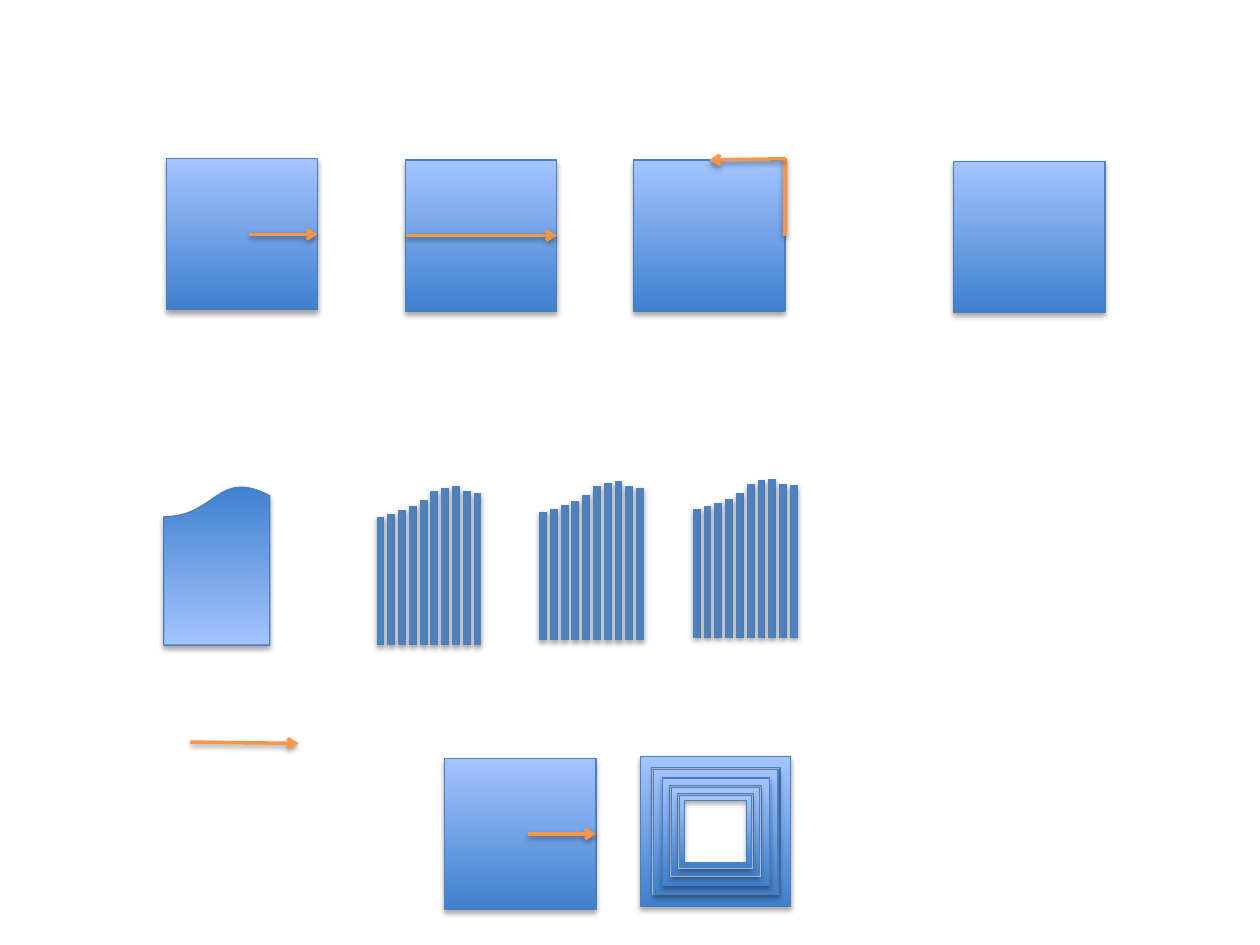
import pptx
import pptx.util
import pptx.dml.color
import pptx.enum.shapes
import pptx.oxml
from pptx.oxml.ns import qn

Inches = pptx.util.Inches
Pt = pptx.util.Pt
RGBColor = pptx.dml.color.RGBColor
Shape = pptx.enum.shapes.MSO_SHAPE
STRAIGHT = pptx.enum.shapes.MSO_CONNECTOR.STRAIGHT

DEEP_BLUE = RGBColor(0x3F, 0x80, 0xCE)
PALE_BLUE = RGBColor(0xA4, 0xC4, 0xFF)
EDGE_BLUE = RGBColor(0x4B, 0x7E, 0xBC)
BAR_BLUE = RGBColor(0x4F, 0x81, 0xBD)
ORANGE = RGBColor(0xF7, 0x96, 0x46)
BLACK = RGBColor(0, 0, 0)

TOP, LEFT, RIGHT = 0, 1, 3  # connection sites of a rectangle
SQUARE = 1.2


class Sketch:
    """Holds the shared style and the slide being drawn."""

    shape_shadow = {"alpha": 35, "distance": 1.8}
    line_shadow = {"alpha": 38, "distance": 1.6}

    def __init__(self, slide):
        self.slide = slide

    def group(self):
        return self.slide.shapes.add_group_shape().shapes

    def shadow(self, item, alpha, distance):
        properties = item._element.spPr
        for old in properties.findall(qn("a:effectLst")):
            properties.remove(old)
        effects = pptx.oxml.parse_xml(
            '<a:effectLst xmlns:a="http://schemas.openxmlformats.org/drawingml/2006/main">'
            f'<a:outerShdw blurRad="{Pt(3.1)}" dist="{Pt(distance)}" dir="5400000" rotWithShape="0">'
            f'<a:srgbClr val="{BLACK}"><a:alpha val="{alpha * 1000}"/></a:srgbClr>'
            "</a:outerShdw></a:effectLst>")
        properties.append(effects)

    def shape(self, kind, left, top, width, height, parent=None, **settings):
        shapes = self.slide.shapes if parent is None else parent
        box = shapes.add_shape(kind, Inches(left), Inches(top), Inches(width), Inches(height))
        for name, value in settings.items():
            setattr(box, name, value)
        box.fill.gradient()
        box.fill.gradient_angle = 90
        for stop, color in zip(box.fill.gradient_stops, (DEEP_BLUE, PALE_BLUE)):
            stop.color.rgb = color
        box.line.color.rgb = EDGE_BLUE
        box.line.width = Pt(0.75)
        self.shadow(box, **self.shape_shadow)
        return box

    def square(self, left, top, parent=None):
        return self.shape(Shape.RECTANGLE, left, top, SQUARE, SQUARE, parent)

    def frame(self, center_x, center_y, size):
        box = self.shape(Shape.FRAME, center_x - size / 2, center_y - size / 2, size, size)
        box.adjustments[0] = 0.071

    def line(self, start, end, color=ORANGE, width=2, arrow=False,
             begin=None, finish=None, parent=None):
        shapes = self.slide.shapes if parent is None else parent
        link = shapes.add_connector(STRAIGHT, *(Inches(value) for value in (*start, *end)))
        if begin:
            link.begin_connect(*begin)
        if finish:
            link.end_connect(*finish)
        link.line.color.rgb = color
        link.line.width = Pt(width)
        if arrow:
            outline = link._element.spPr.find(qn("a:ln"))
            outline.append(outline.makeelement(qn("a:tailEnd"), {"type": "arrow"}))
        self.shadow(link, **self.line_shadow)

    def bars(self, left, base, heights, span=0.77):
        cluster = self.group()
        step = span / (len(heights) - 1)
        for index, height in enumerate(heights):
            x = left + index * step
            self.line((x, base - height), (x, base), BAR_BLUE, 4.5, parent=cluster)


def main():
    deck = pptx.Presentation()
    deck.slide_width, deck.slide_height = Inches(10), Inches(7.5)
    sketch = Sketch(deck.slides.add_slide(deck.slide_layouts[6]))

    # Area under the curve
    sketch.shape(Shape.FLOWCHART_DOCUMENT, 1.3, 3.85, 0.84, 1.27, rotation=180)

    # Bottom square with its half-width arrow
    bottom_square = sketch.square(3.53, 6.02)
    corner_square = sketch.square(5.03, 1.27)
    sketch.line((4.19, 6.62), (4.73, 6.62), arrow=True, finish=(bottom_square, RIGHT))

    # Square with a full-width arrow
    full = sketch.group()
    full_square = sketch.square(3.22, 1.27, full)
    sketch.line((3.22, 1.87), (4.42, 1.87), arrow=True, parent=full,
                begin=(full_square, LEFT), finish=(full_square, RIGHT))

    # Upright part of the path round the corner
    sketch.line((6.23, 1.87), (6.23, 1.25), begin=(corner_square, RIGHT))

    # Slices of the area, and the direction they are taken in
    heights = (1.02, 1.04, 1.07, 1.1, 1.15, 1.22, 1.25, 1.26, 1.22, 1.21)
    sketch.bars(3.02, 5.12, heights)
    sketch.line((1.51, 5.89), (2.37, 5.9), arrow=True)
    for left, base in ((4.31, 5.08), (5.53, 5.06)):
        sketch.bars(left, base, heights)

    # Nested frames
    for size in (1.19, 0.99, 0.85, 0.7, 0.57):
        sketch.frame(5.68, 6.6, size)

    # Square with a half-width arrow
    half = sketch.group()
    half_square = sketch.square(1.32, 1.26, half)
    sketch.line((1.98, 1.86), (2.52, 1.86), arrow=True, parent=half,
                finish=(half_square, RIGHT))

    # Level part of the path round the corner
    sketch.line((6.23, 1.26), (5.63, 1.27), arrow=True, finish=(corner_square, TOP))

    # Plain square
    sketch.square(7.57, 1.28)

    deck.save("out.pptx")


if __name__ == "__main__":
    main()
